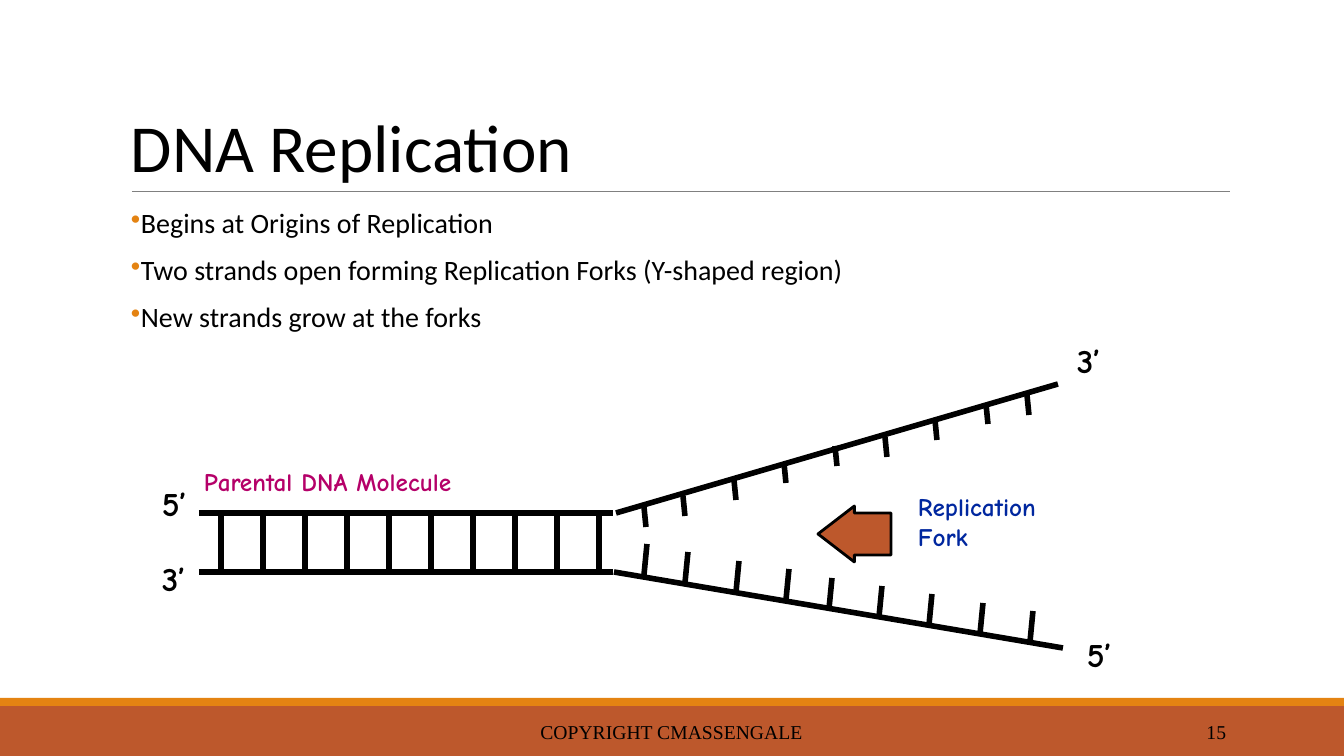
from pptx import Presentation
from pptx.dml.color import RGBColor
from pptx.enum.shapes import MSO_CONNECTOR, MSO_SHAPE
from pptx.enum.text import MSO_ANCHOR, MSO_AUTO_SIZE, PP_ALIGN
from pptx.oxml.ns import qn
from pptx.util import Emu, Pt
from lxml.etree import SubElement

EMU_PER_PX = 914400 / 100.8
BLACK, RUST, ORANGE = "000000", "BD582C", "E48312"
COMIC = "Comic Neue"


def px(length):
    """Turn pixels into EMU."""
    return Emu(round(length * EMU_PER_PX))


def color(value):
    """Turn a hex string into a colour."""
    return RGBColor.from_string(value)


def add_block(slide, kind, left, top, width, height, fill):
    """Add a filled preset shape without an outline."""
    shape = slide.shapes.add_shape(kind, px(left), px(top), px(width), px(height))
    shape.shadow.inherit = False
    shape.fill.solid()
    shape.fill.fore_color.rgb = color(fill)
    shape.line.fill.background()
    return shape


def add_line(slide, start, end, line_color=BLACK, weight=4):
    """Add a straight line between two points."""
    line = slide.shapes.add_connector(
        MSO_CONNECTOR.STRAIGHT, *[px(value) for value in (*start, *end)])
    line.line.color.rgb = color(line_color)
    line.line.width = Pt(weight)
    SubElement(line._element.spPr, qn("a:effectLst"))


def add_text(slide, box, lines, size, font="Calibri", font_color=BLACK, bold=False,
             align=PP_ALIGN.LEFT, anchor=MSO_ANCHOR.TOP):
    """Add a wrapped text box with one paragraph per line."""
    shape = slide.shapes.add_textbox(*[px(value) for value in box])
    frame = shape.text_frame
    frame.word_wrap = True
    frame.vertical_anchor = anchor
    frame.text = "\n".join(lines)
    for paragraph in frame.paragraphs:
        paragraph.alignment = align
        paragraph.font.size = Pt(size)
        paragraph.font.name = font
        paragraph.font.bold = bold
        paragraph.font.color.rgb = color(font_color)
    return frame


def add_label(slide, box, lines, size, font_color=BLACK):
    """Add a bold diagram label that grows with its text."""
    frame = add_text(slide, box, lines, size, COMIC, font_color, bold=True)
    frame.word_wrap = False
    frame.auto_size = MSO_AUTO_SIZE.SHAPE_TO_FIT_TEXT


def add_bullets(slide, box, lines):
    """Add a list with orange bullets."""
    for paragraph in add_text(slide, box, lines, 20).paragraphs:
        paragraph.line_spacing = 0.9
        paragraph.space_before = Pt(12)
        properties = paragraph._p.get_or_add_pPr()
        properties.set("marL", str(px(10)))
        properties.set("indent", str(px(-10)))
        bullet_color = SubElement(properties, qn("a:buClr"))
        SubElement(bullet_color, qn("a:srgbClr")).set("val", ORANGE)
        SubElement(properties, qn("a:buChar")).set("char", "•")
        properties.append(properties.find(qn("a:defRPr")))


def add_page_frame(slide):
    """Add the title, its rule and the footer band."""
    add_block(slide, MSO_SHAPE.RECTANGLE, 0, 706, 1344, 50, RUST)
    add_block(slide, MSO_SHAPE.RECTANGLE, 0, 698, 1344, 8, ORANGE)
    add_line(slide, (132, 191), (1230, 191), "808080", 0.5)
    title = add_text(slide, (121, 31, 1109, 160), ["DNA Replication"], 48,
                     anchor=MSO_ANCHOR.BOTTOM)
    title.paragraphs[0].line_spacing = 0.85
    for box, text, align in (
            ((406, 712, 531, 40), "COPYRIGHT CMASSENGALE", PP_ALIGN.CENTER),
            ((1092, 712, 144, 40), "15", PP_ALIGN.RIGHT)):
        add_text(slide, box, [text], 14, "Times New Roman", align=align,
                 anchor=MSO_ANCHOR.MIDDLE)


def add_strands(slide):
    """Draw the parental ladder and the two opened strands with their bases."""
    for y in (513, 572):
        add_line(slide, (199, y), (613, y))
    for rung in range(10):
        x = 221 + 42 * rung
        add_line(slide, (x, 516), (x, 569))
    add_line(slide, (616, 513), (1058, 384))
    add_line(slide, (614, 572), (1063, 648))
    upper_bases = ((644, 507), (683, 496), (734, 480), (784, 463), (835, 446),
                   (885, 437), (935, 420), (986, 404), (1027, 395))
    for x, y in upper_bases:
        add_line(slide, (x, y), (x + 2, y + 20))
    lower_bases = (644, 685, 736, 786, 829, 879, 929, 980, 1030)
    for index, x in enumerate(lower_bases):
        y = round(575 + 8.4 * index)
        add_line(slide, (x, y), (x + 3, y - 31))


def add_fork_labels(slide):
    """Add the fork arrow, the names and the strand ends."""
    add_label(slide, (908, 486, 151, 71), ["Replication", "Fork"], 18, "00279F")
    add_label(slide, (194, 461, 304, 40), ["Parental DNA Molecule"], 18, "B50069")
    arrow = add_block(slide, MSO_SHAPE.LEFT_ARROW, 818, 506, 73, 56, RUST)
    arrow.adjustments[0] = 0.75
    arrow.adjustments[1] = 0.65
    arrow.line.color.rgb = color(BLACK)
    arrow.line.width = Pt(2)
    for left, top, text in ((1067, 335, "3’"), (152, 478, "5’"),
                            (152, 553, "3’"), (1077, 629, "5’")):
        add_label(slide, (left, top, 48, 50), [text], 24)


def main():
    """Build the slide and save it."""
    presentation = Presentation()
    presentation.slide_width = px(1344)
    presentation.slide_height = px(756)
    slide = presentation.slides.add_slide(presentation.slide_layouts[6])
    add_page_frame(slide)
    add_bullets(slide, (121, 204, 1109, 444), [
        "Begins at Origins of Replication",
        "Two strands open forming Replication Forks (Y-shaped region)",
        "New strands grow at the forks"])
    add_strands(slide)
    add_fork_labels(slide)
    presentation.save("out.pptx")


if __name__ == "__main__":
    main()
